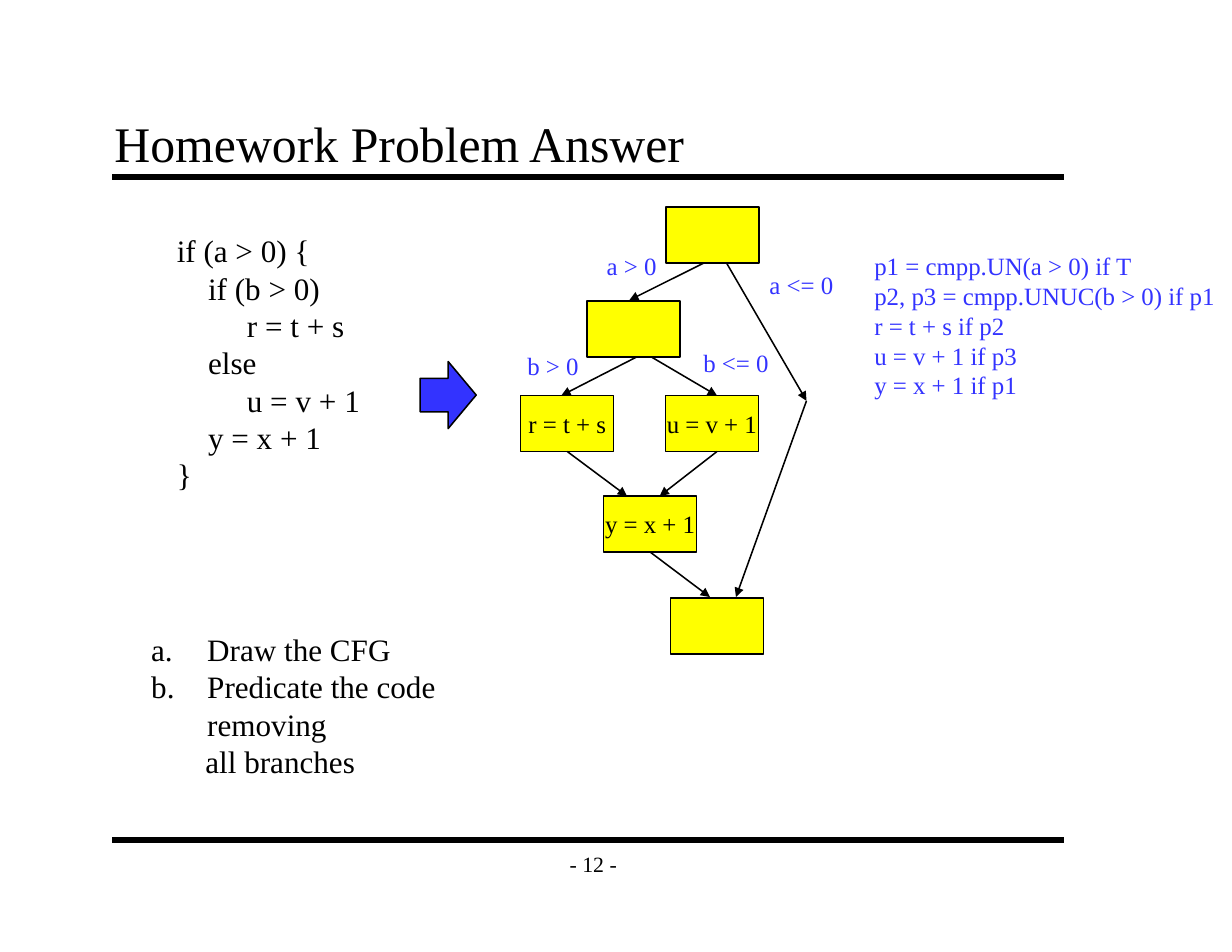
from lxml import etree
from pptx import Presentation
from pptx.dml.color import RGBColor
from pptx.enum.shapes import MSO_CONNECTOR, MSO_SHAPE
from pptx.enum.text import MSO_ANCHOR, MSO_AUTO_SIZE, PP_ALIGN
from pptx.oxml.ns import qn
from pptx.util import Cm, Pt

RECT, ARROW = MSO_SHAPE.RECTANGLE, MSO_SHAPE.RIGHT_ARROW
LINE = MSO_CONNECTOR.STRAIGHT
LEFT, CENTER = PP_ALIGN.LEFT, PP_ALIGN.CENTER
TOP, MIDDLE, BOTTOM = MSO_ANCHOR.TOP, MSO_ANCHOR.MIDDLE, MSO_ANCHOR.BOTTOM

FONT = "Times New Roman"
BLACK, BLUE, YELLOW = "000000", "3333FF", "FFFF00"
BOX = (2.11, 1.27)
UNDER = 2  # connection site at the middle of the bottom side

TITLE = "Homework Problem Answer"
PAGE = "- 12 -"
# text, left indent in cm
CODE = [
    ("if (a > 0) {", 0),
    ("if (b > 0)", 0.71),
    ("r = t + s", 1.59),
    ("else", 0.71),
    ("u = v + 1", 1.59),
    ("y = x + 1", 0.71),
    ("}", 0),
]
TASKS = ["Draw the CFG", "Predicate the code removing", "all branches"]
PREDS = [
    "p1 = cmpp.UN(a > 0) if T",
    "p2, p3 = cmpp.UNUC(b > 0) if p1",
    "r = t + s if p2",
    "u = v + 1 if p3",
    "y = x + 1 if p1",
]
# name: left, top, text
BLOCKS = {
    "entry": (15.11, 4.7, ""),
    "test": (13.31, 6.83, ""),
    "else": (15.09, 8.97, "u = v + 1"),
    "then": (11.81, 8.97, "r = t + s"),
    "join": (13.69, 11.25, "y = x + 1"),
    "exit": (15.21, 13.56, ""),
}
BEND = (18.29, 9.09)
# start (a point or the block it leaves from below), end
EDGES = [
    ((15.95, 5.97), (14.27, 6.81)),
    ((16.48, 5.97), BEND),
    ((14.43, 8.1), (12.73, 8.97)),
    ((14.78, 8.1), (16.26, 8.97)),
    ("then", (14.22, 11.25)),
    ((16.26, 10.24), (14.96, 11.25)),
    ("join", (16.1, 13.54)),
    (BEND, (16.69, 13.54)),
]
# text, left, top, width
LABELS = [
    ("b > 0", 11.71, 7.82, 1.68),
    ("b <= 0", 15.7, 7.77, 2.01),
    ("a > 0", 13.51, 5.56, 1.65),
    ("a <= 0", 17.2, 5.99, 1.98),
]

prs = Presentation()
prs.slide_width, prs.slide_height = Cm(27.94), Cm(21.59)
slide = prs.slides.add_slide(prs.slide_layouts[5])
shapes = slide.shapes


def rgb(code):
    return RGBColor.from_string(code)


def write(shape, lines, size, color=BLACK, align=LEFT, anchor=TOP, wrap=False):
    frame = shape.text_frame
    frame.text = "\n".join(lines)
    form = {"word_wrap": wrap, "auto_size": MSO_AUTO_SIZE.NONE,
            "vertical_anchor": anchor}
    for key, val in form.items():
        setattr(frame, key, val)
    for para in frame.paragraphs:
        para.alignment = align
        para.font.name, para.font.size = FONT, Pt(size)
        para.font.color.rgb = rgb(color)
    return frame.paragraphs


def text(at, lines, size, **form):
    return write(shapes.add_textbox(*map(Cm, at)), lines, size, **form)


def block(kind, at, fill):
    shape = shapes.add_shape(kind, *map(Cm, at))
    shape.shadow.inherit = False
    shape.fill.solid()
    shape.fill.fore_color.rgb = rgb(fill)
    shape.line.color.rgb, shape.line.width = rgb(BLACK), Pt(1)
    return shape


def line(start, end, width):
    wire = shapes.add_connector(LINE, *map(Cm, start + end))
    wire.line.color.rgb, wire.line.width = rgb(BLACK), Pt(width)
    etree.SubElement(wire._element.spPr, qn("a:effectLst"))
    return wire


def indent(para, left, hang=0):
    props = para._p.get_or_add_pPr()
    props.set("marL", str(Cm(left)))
    props.set("indent", str(Cm(-hang)))
    return props


# Title, rules and page number
title = shapes.title
title.left, title.top, title.width, title.height = map(
    Cm, (2.34, 2.34, 21.59, 1.7))
write(title, [TITLE], 32, anchor=BOTTOM, wrap=True)
for y in (4.01, 19.05):
    line((2.54, y), (24.13, y), 4)
text((12.5, 19.05, 1.91, 1.07), [PAGE], 14, align=CENTER, anchor=MIDDLE)

# Source code and tasks
paras = text((3.76, 5.13, 5.2, 6.17), [row for row, _ in CODE], 20, wrap=True)
for para, (_, left) in zip(paras, CODE):
    indent(para, left)

paras = text((3.18, 14.17, 7.4, 3.8), TASKS, 20, wrap=True)
for para in paras[:2]:
    props = indent(para, 1.27, 1.27)
    mark = etree.Element(qn("a:buAutoNum"), type="alphaLcPeriod")
    props.insert(0, mark)
indent(paras[2], 1.23)

# Flow graph
nodes = {}
for name, (left, top, label) in BLOCKS.items():
    nodes[name] = block(RECT, (left, top) + BOX, YELLOW)
    if label:
        write(nodes[name], [label], 16, align=CENTER, anchor=MIDDLE)

for start, end in EDGES:
    if start in nodes:
        wire = line(BLOCKS[start][:2], end, 1)
        wire.begin_connect(nodes[start], UNDER)
    else:
        wire = line(start, end, 1)
    etree.SubElement(wire.line._get_or_add_ln(), qn("a:tailEnd"),
                     type="triangle")

for label, left, top, width in LABELS:
    text((left, top, width, 0.94), [label], 16, color=BLUE)

# Predicated code
block(ARROW, (9.53, 8.2, 1.27, 1.52), BLUE)
text((19.58, 5.56, 8.33, 3.68), PREDS, 16, color=BLUE)

prs.save("out.pptx")
